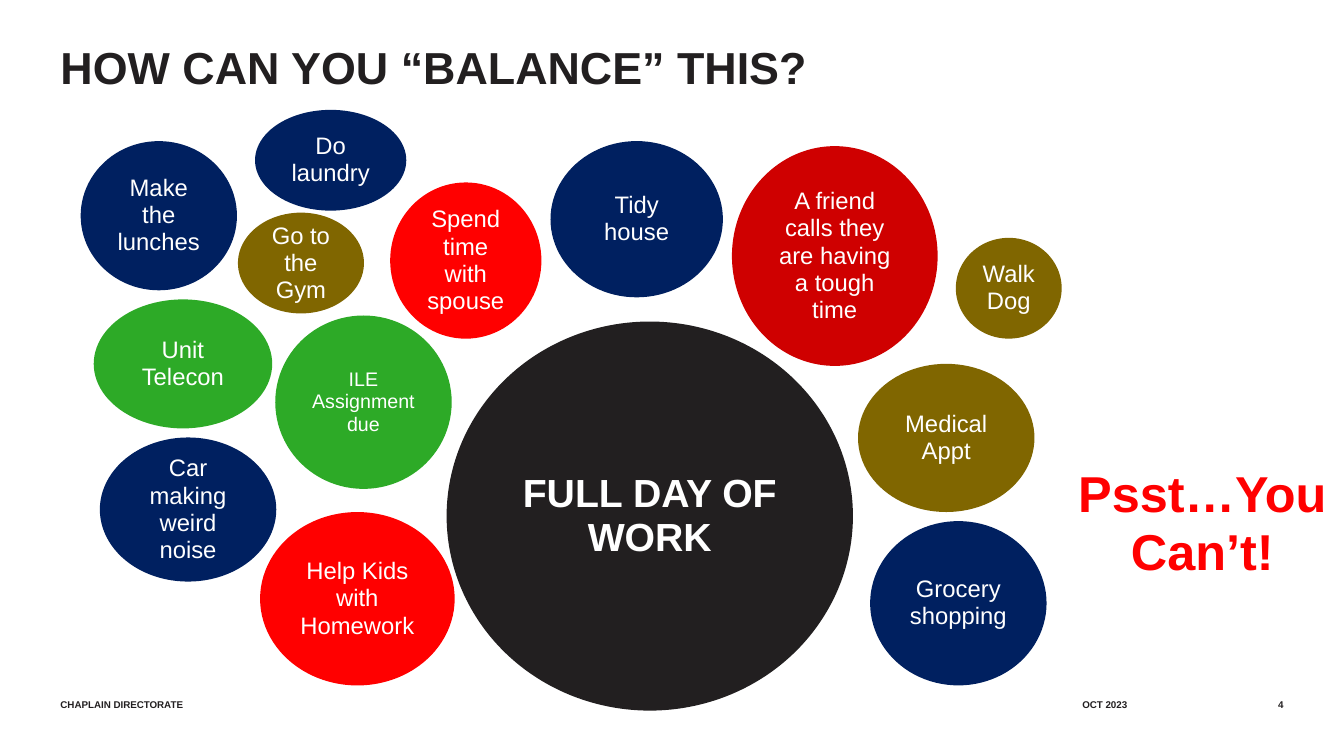
import pptx
import pptx.dml.color
import pptx.enum.shapes
import pptx.enum.text
import pptx.util

Inches = pptx.util.Inches
ALIGN = pptx.enum.text.PP_ALIGN
ANCHOR = pptx.enum.text.MSO_ANCHOR

INK, WHITE, RED = "221F20", "FFFFFF", "FF0000"
NAVY, GREEN, OLIVE, CRIMSON = "002060", "2DAA27", "806600", "CF0000"


def color(value):
    return pptx.dml.color.RGBColor.from_string(value)


class BalanceSlide:
    """Hold the style and the current slide, and add each kind of element."""

    font_name = "Arial"

    def __init__(self, presentation):
        self.slide = presentation.slides.add_slide(presentation.slide_layouts[5])

    def set_text(self, frame, text, size, ink, bold, align, anchor, spacing, inset):
        frame.word_wrap = True
        frame.auto_size = pptx.enum.text.MSO_AUTO_SIZE.NONE
        frame.vertical_anchor = anchor
        if not inset:
            frame.margin_left = frame.margin_right = 0
            frame.margin_top = frame.margin_bottom = 0
        paragraph = frame.paragraphs[0]
        paragraph.alignment = align
        paragraph.line_spacing = spacing
        paragraph.space_before = pptx.util.Pt(0)
        run = paragraph.add_run()
        run.text = text
        run.font.name = self.font_name
        run.font.size = pptx.util.Pt(size)
        run.font.bold = bold
        run.font.color.rgb = color(ink)

    def title(self, text, left, top, width, height):
        heading = self.slide.shapes.title
        heading.left, heading.top = Inches(left), Inches(top)
        heading.width, heading.height = Inches(width), Inches(height)
        self.set_text(heading.text_frame, text, 32, INK, True,
                      ALIGN.LEFT, ANCHOR.TOP, 0.9, False)

    def label(self, text, left, top, width, height, size, ink, align, spacing=1.0):
        box = self.slide.shapes.add_textbox(
            Inches(left), Inches(top), Inches(width), Inches(height))
        self.set_text(box.text_frame, text, size, ink, True,
                      align, ANCHOR.BOTTOM, spacing, False)

    def bubble(self, text, fill, left, top, width, height, size=17, bold=False):
        oval = self.slide.shapes.add_shape(
            pptx.enum.shapes.MSO_SHAPE.OVAL,
            Inches(left), Inches(top), Inches(width), Inches(height))
        oval.shadow.inherit = False
        oval.fill.solid()
        oval.fill.fore_color.rgb = color(fill)
        oval.line.fill.background()
        self.set_text(oval.text_frame, text, size, WHITE, bold,
                      ALIGN.CENTER, ANCHOR.MIDDLE, 0.95, True)


def main():
    presentation = pptx.Presentation()
    presentation.slide_width = Inches(13.33)
    presentation.slide_height = Inches(7.5)
    balance = BalanceSlide(presentation)

    footer = [
        ("CHAPLAIN DIRECTORATE", 0.6, 5.87, ALIGN.LEFT),
        ("OCT 2023", 10, 1.18, ALIGN.RIGHT),
        ("4", 11.57, 1.16, ALIGN.RIGHT),
    ]
    for text, left, width, align in footer:
        balance.label(text, left, 6.85, width, 0.2, 7, INK, align)

    balance.title("HOW CAN YOU “BALANCE” THIS?", 0.6, 0.45, 9, 1)

    demands = [
        ("A friend calls they are having a tough time", CRIMSON, 7.26, 1.45, 2.04, 2.18),
        ("Make the lunches", NAVY, 0.8, 1.4, 1.55, 1.48),
        ("Tidy house", NAVY, 5.46, 1.4, 1.71, 1.55),
        ("Spend time with spouse", RED, 3.87, 1.81, 1.5, 1.55),
        ("Car making weird noise", NAVY, 0.99, 4.34, 1.75, 1.43),
        ("Help Kids with Homework", RED, 2.58, 5.08, 1.93, 1.72),
        ("Do laundry", NAVY, 2.53, 1.09, 1.5, 1),
        ("ILE Assignment due", GREEN, 2.73, 3.13, 1.75, 1.72, 14),
        ("Unit Telecon", GREEN, 0.93, 2.97, 1.77, 1.28),
        ("Go to the Gym", OLIVE, 2.36, 2.11, 1.25, 1),
        ("Medical Appt", OLIVE, 8.51, 3.61, 1.75, 1.47),
        ("Grocery shopping", NAVY, 8.63, 5.17, 1.75, 1.63),
        ("Walk Dog", OLIVE, 9.48, 2.36, 1.05, 1),
    ]
    for demand in demands:
        balance.bubble(*demand)

    balance.label("Psst…You Can’t!", 10.6, 3.81, 2.65, 1.96, 36, RED, ALIGN.CENTER, 0.95)
    balance.bubble("FULL DAY OF WORK", INK, 4.43, 3.19, 4.03, 3.86, 28, True)
    presentation.save("out.pptx")


if __name__ == "__main__":
    main()
